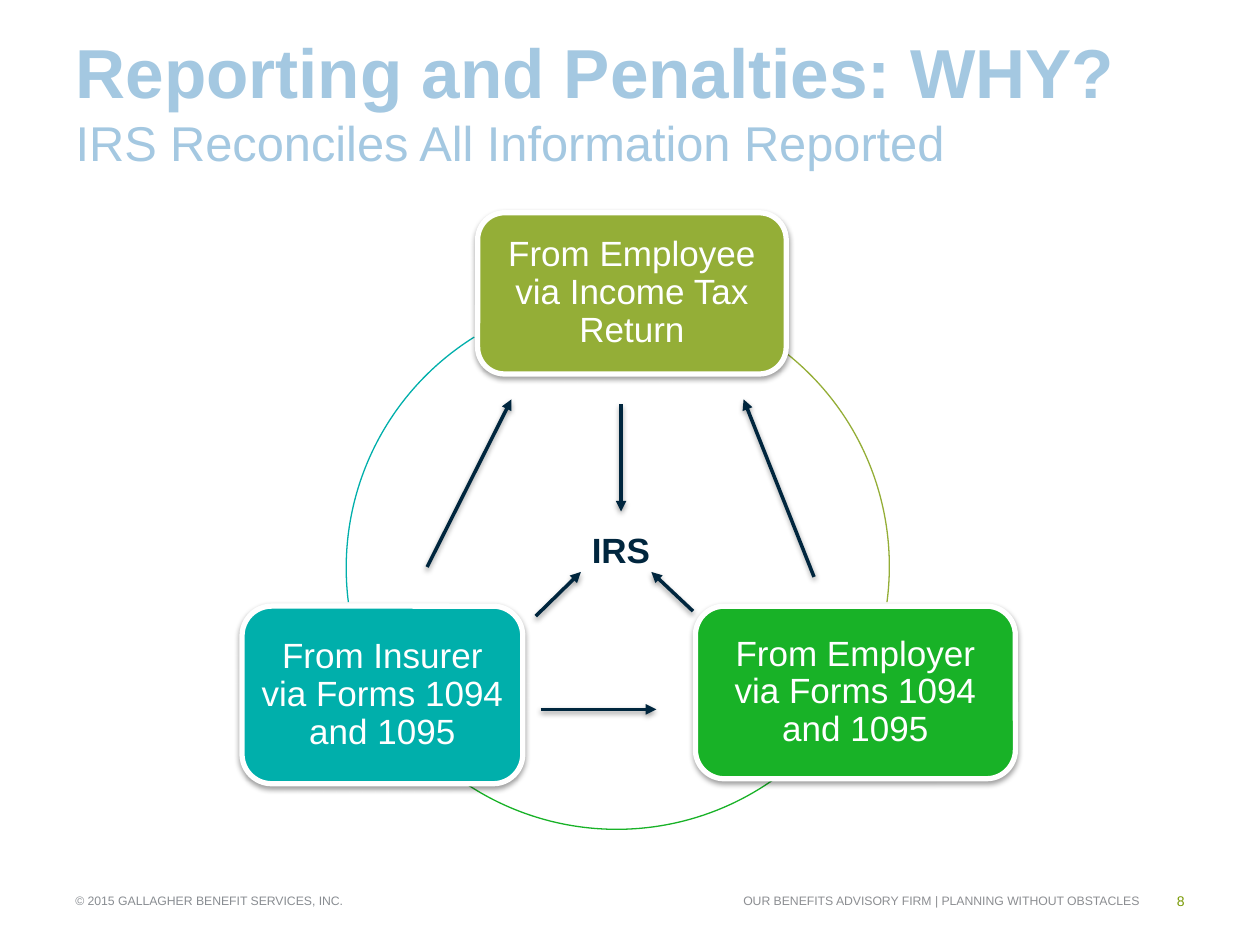
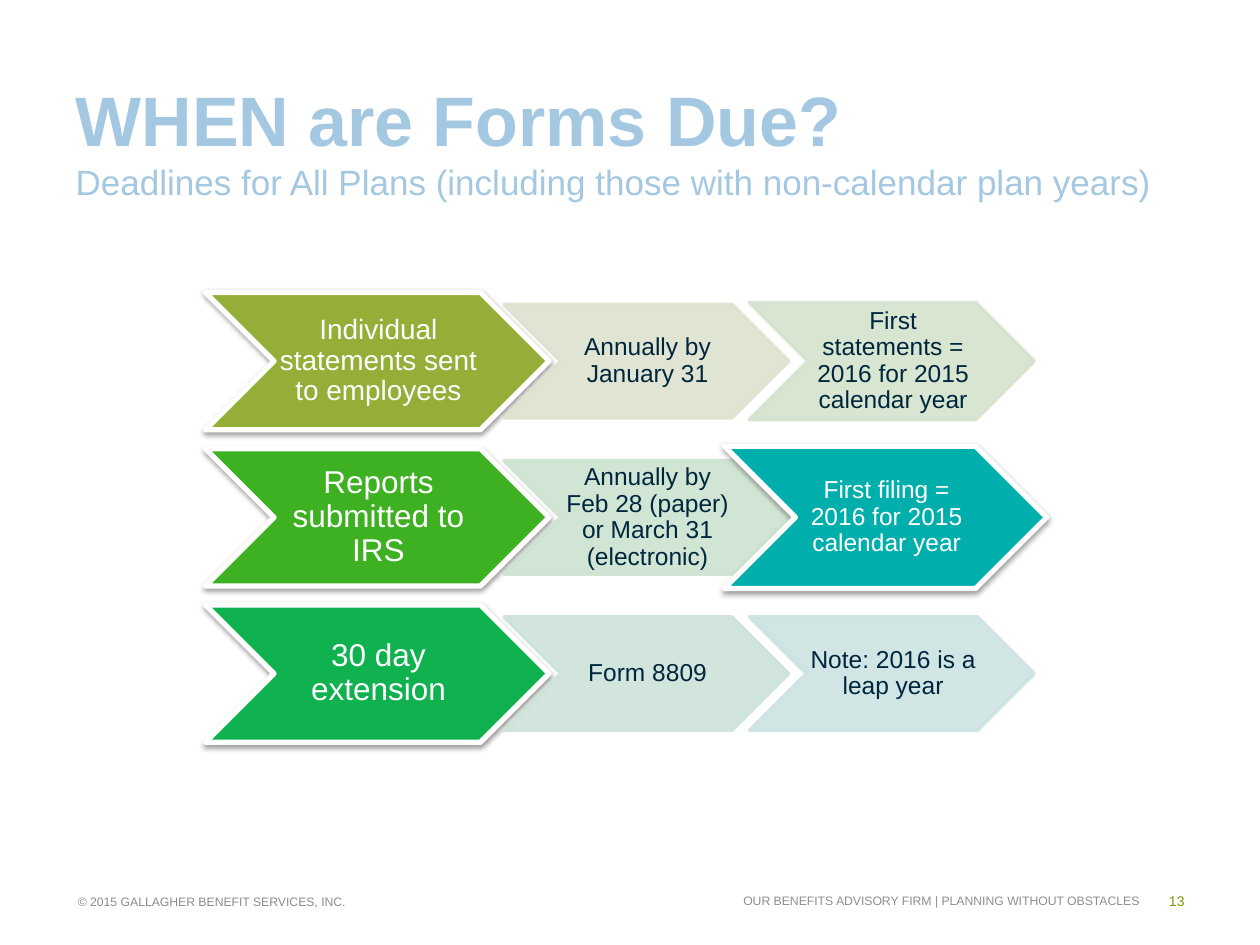
"""Build two slides on health-plan reporting: who reports to the IRS, and when forms are due."""
from lxml import etree
from pptx import Presentation
from pptx.dml.color import RGBColor
from pptx.enum.shapes import MSO_CONNECTOR, MSO_SHAPE
from pptx.enum.text import MSO_ANCHOR, MSO_AUTO_SIZE, PP_ALIGN
from pptx.oxml.ns import qn
from pptx.util import Cm, Pt

ROUNDED, CHEVRON, ARC = MSO_SHAPE.ROUNDED_RECTANGLE, MSO_SHAPE.CHEVRON, MSO_SHAPE.ARC
STRAIGHT = MSO_CONNECTOR.STRAIGHT
LEFT, CENTER, RIGHT = PP_ALIGN.LEFT, PP_ALIGN.CENTER, PP_ALIGN.RIGHT
TOP, MIDDLE, BOTTOM = MSO_ANCHOR.TOP, MSO_ANCHOR.MIDDLE, MSO_ANCHOR.BOTTOM
NO_FIT = MSO_AUTO_SIZE.NONE

WHITE = RGBColor(0xFF, 0xFF, 0xFF)
NAVY = RGBColor(0x00, 0x26, 0x3E)
SKY = RGBColor(0xA4, 0xC8, 0xE1)
OLIVE = RGBColor(0x94, 0xAE, 0x37)
GREEN = RGBColor(0x18, 0xB2, 0x27)
LEAF = RGBColor(0x3E, 0xB1, 0x22)
EMERALD = RGBColor(0x0F, 0xB2, 0x4F)
TEAL = RGBColor(0x00, 0xAF, 0xAB)
PALE_OLIVE = RGBColor(0xDC, 0xE3, 0xCE)
PALE_LIME = RGBColor(0xD3, 0xE3, 0xCD)
PALE_LEAF = RGBColor(0xCD, 0xE3, 0xD0)
PALE_EMERALD = RGBColor(0xCC, 0xE3, 0xD9)
PALE_TEAL = RGBColor(0xCC, 0xE3, 0xE2)
TAGLINE_GREY = RGBColor(0x8C, 0x8E, 0x92)
COPYRIGHT_GREY = RGBColor(0x89, 0x8D, 0x92)
NUMBER_GREEN = RGBColor(0x79, 0x9A, 0x05)

FONT = "Arial"
COPYRIGHT = "© 2015 GALLAGHER BENEFIT SERVICES, INC."
TAGLINE = "OUR BENEFITS ADVISORY FIRM | PLANNING WITHOUT OBSTACLES"
TAGLINE_BOX = (12.78, 17.65, 10.44, 1.02)
NUMBER_BOX = (23.24, 17.65, 0.89, 1.02)

REPORTING = {
    "title": [("Reporting and Penalties: WHY?", 39.6), ("IRS Reconciles All Information Reported", 27.9)],
    "title_box": (1.27, 0.86, 22.86, 2.72),
    "copyright_box": (1.27, 17.65, 11.51, 1.02),
    "number": "8",
}
DEADLINES = {
    "title": [("WHEN are Forms Due?", 40),
              ("Deadlines for All Plans (including those with non-calendar plan years)", 20)],
    "title_box": (1.27, 1.12, 22.86, 3.1),
    "copyright_box": (1.32, 17.7, 11.48, 0.97),
    "number": "13",
}

REPORTERS = [
    ("From Employee via Income Tax Return", OLIVE, (9.63, 4.29, 6.22, 3.25)),
    ("From Employer via Forms 1094 and 1095", GREEN, (14.02, 12.22, 6.45, 3.48)),
    ("From Insurer via Forms 1094 and 1095", TEAL, (4.88, 12.22, 5.66, 3.58)),
]
ARC_SIZE = 10.95
ARCS = [
    (OLIVE, 6.98, 5.94, 308.6, 7.6),
    (GREEN, 6.96, 5.77, 54.6, 123.3),
    (TEAL, 6.98, 5.97, 172.7, 238.1),
]
ARROWS = [
    (12.52, 8.15, 12.52, 10.31),
    (8.61, 11.43, 10.31, 8.05),
    (16.41, 11.63, 14.99, 8.05),
    (13.97, 12.32, 13.13, 11.53),
    (10.8, 12.42, 11.71, 11.53),
    (10.9, 14.3, 13.23, 14.3),
]

FIRST_ROW_MIDDLE, ROW_PITCH = 7.28, 3.15
STAGES = {
    "form": (4.14, 6.93, 2.77),
    "due": (10.16, 5.74, 2.29),
    "tall note": (15.11, 5.74, 2.36),
    "note": (15.11, 5.74, 2.29),
    "key note": (14.6, 6.5, 2.87),
}
STRONG_STAGES = ("form", "key note")
DEADLINE_ROWS = [
    [("form", "Individual statements sent to employees", OLIVE, 16),
     ("due", "Annually by January 31", PALE_OLIVE, 14),
     ("tall note", "First statements = 2016 for 2015 calendar year", PALE_LIME, 14)],
    [("form", "Reports submitted to IRS", LEAF, 18),
     ("due", "Annually by Feb 28 (paper) or March 31 (electronic)", PALE_LEAF, 14),
     ("key note", "First filing = 2016 for 2015 calendar year", TEAL, 14)],
    [("form", "30 day extension", EMERALD, 18),
     ("due", "Form 8809", PALE_EMERALD, 14),
     ("note", "Note: 2016 is a leap year", PALE_TEAL, 14)],
]


def lengths(values):
    return [Cm(value) for value in values]


def style_paragraph(paragraph, size, color, alignment, bold=False):
    paragraph.alignment = alignment
    font = paragraph.font
    font.name, font.size, font.bold = FONT, Pt(size), bold
    font.color.rgb = color


def add_label(slide, box, text, size, color, alignment=LEFT, anchor=MIDDLE, bold=False):
    frame = slide.shapes.add_textbox(*lengths(box)).text_frame
    frame.word_wrap = True
    frame.vertical_anchor = anchor
    frame.text = text
    style_paragraph(frame.paragraphs[0], size, color, alignment, bold)


def add_shadow(effects):
    shadow = etree.SubElement(effects, qn("a:outerShdw"), blurRad="40000", dist="20000",
                              dir="5400000", rotWithShape="0")
    black = etree.SubElement(shadow, qn("a:srgbClr"), val="000000")
    etree.SubElement(black, qn("a:alpha"), val="38000")


def add_block(slide, preset, box, text, fill, size, margins, strong=True):
    shape = slide.shapes.add_shape(preset, *lengths(box))
    shape.fill.solid()
    shape.fill.fore_color.rgb = fill
    shape.line.color.rgb = WHITE if strong else fill
    shape.line.width = Pt(3 if strong else 2)
    shape.shadow.inherit = False
    properties = shape._element.spPr
    if strong:
        add_shadow(properties.find(qn("a:effectLst")))
    else:
        for color in properties.iter(qn("a:srgbClr")):
            etree.SubElement(color, qn("a:alpha"), val="90000")
    frame = shape.text_frame
    frame.word_wrap = True
    frame.vertical_anchor = MIDDLE
    frame.margin_left, frame.margin_top, frame.margin_right, frame.margin_bottom = lengths(margins)
    frame.text = text
    paragraph = frame.paragraphs[0]
    paragraph.line_spacing = 0.9
    style_paragraph(paragraph, size, WHITE if strong else NAVY, CENTER)


def add_arc(slide, color, left, top, start, end):
    arc = slide.shapes.add_shape(ARC, *lengths((left, top, ARC_SIZE, ARC_SIZE)))
    for index, degrees in enumerate((start, end)):
        arc.adjustments[index] = degrees * 0.6
    arc.fill.background()
    arc.line.color.rgb = color
    arc.line.width = Pt(0.75)
    arc.shadow.inherit = False


def add_arrow(slide, ends):
    arrow = slide.shapes.add_connector(STRAIGHT, *lengths(ends))
    arrow.line.color.rgb = NAVY
    arrow.line.width = Pt(2)
    properties = arrow._element.spPr
    etree.SubElement(properties.find(qn("a:ln")), qn("a:tailEnd"), type="triangle")
    add_shadow(etree.SubElement(properties, qn("a:effectLst")))


def add_slide(presentation, content):
    slide = presentation.slides.add_slide(presentation.slide_layouts[5])
    title = slide.shapes.title
    title.left, title.top, title.width, title.height = lengths(content["title_box"])
    frame = title.text_frame
    frame.auto_size = NO_FIT
    frame.vertical_anchor = BOTTOM
    paragraph = frame.paragraphs[0]
    (heading, heading_size), (subtitle, subtitle_size) = content["title"]
    style_paragraph(paragraph, heading_size, SKY, LEFT)
    heading_run = paragraph.add_run()
    heading_run.text = heading
    heading_run.font.bold = True
    paragraph.add_line_break()
    subtitle_run = paragraph.add_run()
    subtitle_run.text = subtitle
    subtitle_run.font.size = Pt(subtitle_size)
    add_label(slide, TAGLINE_BOX, TAGLINE, 7, TAGLINE_GREY, RIGHT)
    add_label(slide, content["copyright_box"], COPYRIGHT, 7, COPYRIGHT_GREY)
    add_label(slide, NUMBER_BOX, content["number"], 8, NUMBER_GREEN, RIGHT)
    return slide


def build_reporting(presentation):
    slide = add_slide(presentation, REPORTING)
    for arc in ARCS:
        add_arc(slide, *arc)
    for text, color, box in REPORTERS:
        add_block(slide, ROUNDED, box, text, color, 20, (0.2, 0.2, 0.2, 0.2))
    add_label(slide, (11.68, 10.52, 2.11, 1.12), "IRS", 20, NAVY, anchor=TOP, bold=True)
    for ends in ARROWS:
        add_arrow(slide, ends)


def build_deadlines(presentation):
    slide = add_slide(presentation, DEADLINES)
    for index, row in enumerate(DEADLINE_ROWS):
        middle = FIRST_ROW_MIDDLE + index * ROW_PITCH
        for stage, text, color, size in row:
            left, width, height = STAGES[stage]
            box = (left, middle - height / 2, width, height)
            add_block(slide, CHEVRON, box, text, color, size, (0.05, 0.03, 0, 0.03),
                      stage in STRONG_STAGES)


def main():
    presentation = Presentation()
    presentation.slide_width, presentation.slide_height = Cm(25.4), Cm(19.05)
    build_reporting(presentation)
    build_deadlines(presentation)
    presentation.save("out.pptx")


if __name__ == "__main__":
    main()
